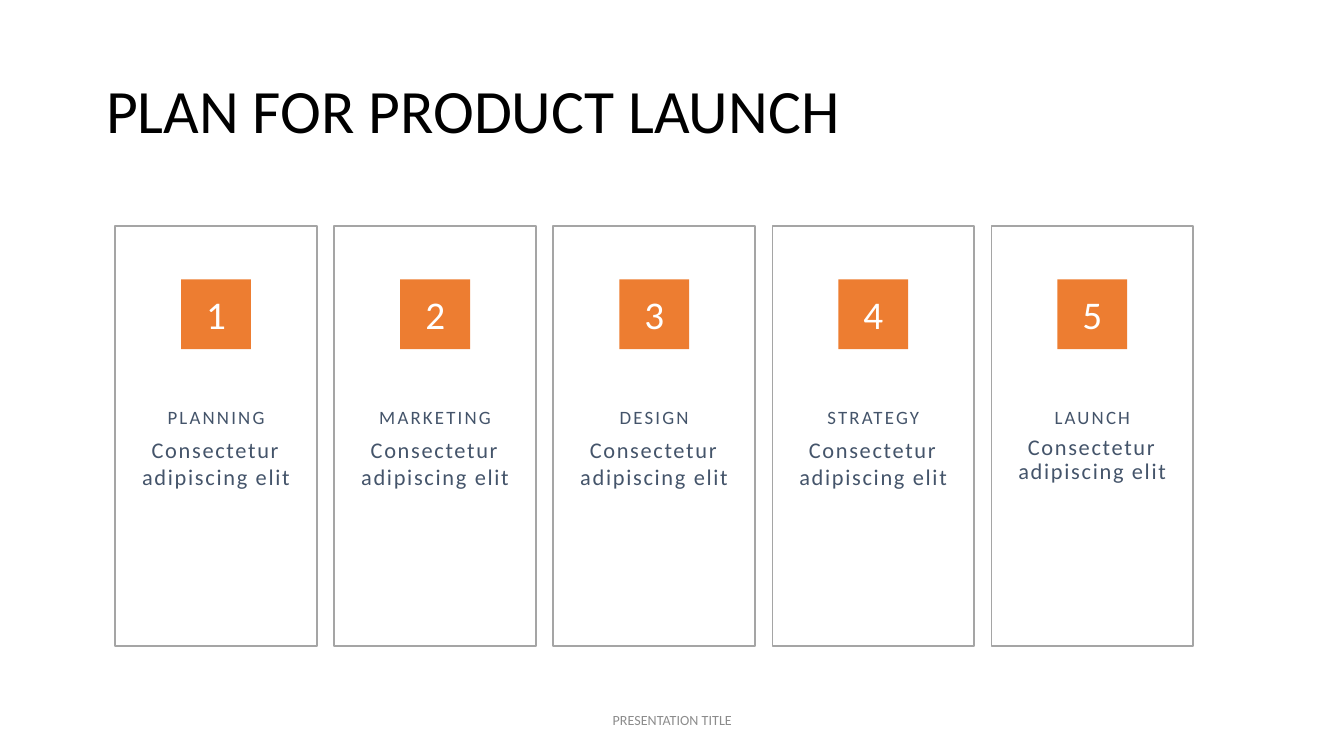
from dataclasses import dataclass

from pptx import Presentation
from pptx.dml.color import RGBColor as Rgb
from pptx.enum.shapes import MSO_SHAPE as Preset
from pptx.enum.text import MSO_ANCHOR as Anchor, MSO_AUTO_SIZE as AutoSize, PP_ALIGN as Align
from pptx.shapes.autoshape import Shape
from pptx.shapes.shapetree import SlideShapes
from pptx.text.text import TextFrame
from pptx.util import Cm, Pt


@dataclass(frozen=True)
class Theme:
    font: str = "Calibri"
    black: str = "000000"
    white: str = "FFFFFF"
    border: str = "A5A5A5"
    accent: str = "ED7D31"
    ink: str = "44546A"
    muted: str = "8C8C8C"
    title_size: float = 33
    number_size: float = 21
    heading_size: float = 10.1
    detail_size: float = 12
    footer_size: float = 7.5


@dataclass(frozen=True)
class Step:
    number: int
    heading: str
    detail: str = "Consectetur adipiscing elit"
    detail_spacing: float = 1.0


THEME = Theme()
STEPS = [
    Step(1, "PLANNING"),
    Step(2, "MARKETING"),
    Step(3, "DESIGN"),
    Step(4, "STRATEGY"),
    Step(5, "LAUNCH", detail_spacing=0.9),
]

# Card grid, in centimetres
CARD_LEFT, CARD_TOP = 2.18, 4.27
CARD_WIDTH, CARD_HEIGHT = 3.81, 7.95
CARD_PITCH = 4.14
BADGE_SIZE, BADGE_TOP = 1.32, 5.28


def write(frame: TextFrame, text: str, *, size: float, color: str,
          align: Align = Align.CENTER, line: float = 1.0, after: float = 0,
          tracking: float = 0, new_paragraph: bool = False) -> None:
    """Write one formatted paragraph; tracking is letter spacing in points."""
    para = frame.add_paragraph() if new_paragraph else frame.paragraphs[0]
    para.alignment = align
    para.line_spacing = line
    para.space_before, para.space_after = Pt(0), Pt(after)
    span = para.add_run()
    span.text = text
    span.font.name = THEME.font
    span.font.size = Pt(size)
    span.font.color.rgb = Rgb.from_string(color)
    if tracking:
        span.font._element.set("spc", str(round(tracking * 100)))


def add_box(shapes: SlideShapes, left: float, top: float, width: float,
            height: float, fill: str, border: str | None = None) -> Shape:
    box = shapes.add_shape(Preset.RECTANGLE, Cm(left), Cm(top), Cm(width), Cm(height))
    box.shadow.inherit = False
    box.fill.solid()
    box.fill.fore_color.rgb = Rgb.from_string(fill)
    if border:
        box.line.color.rgb = Rgb.from_string(border)
        box.line.width = Pt(1)
    else:
        box.line.fill.background()
    box.text_frame.word_wrap = True
    return box


def add_card(shapes: SlideShapes, step: Step, left: float) -> None:
    group = shapes.add_group_shape()

    # Outlined card with heading and detail
    card = add_box(group.shapes, left, CARD_TOP, CARD_WIDTH, CARD_HEIGHT,
                   THEME.white, THEME.border)
    frame = card.text_frame
    frame.vertical_anchor = Anchor.TOP
    frame.margin_left = frame.margin_right = Cm(0.28)
    frame.margin_top, frame.margin_bottom = Cm(3.45), Cm(1.88)
    write(frame, step.heading, size=THEME.heading_size, color=THEME.ink,
          line=0.9, after=4, tracking=1.2)
    write(frame, step.detail, size=THEME.detail_size, color=THEME.ink,
          line=step.detail_spacing, tracking=0.9, new_paragraph=True)

    # Number badge, centred across the card
    badge = add_box(group.shapes, left + (CARD_WIDTH - BADGE_SIZE) / 2, BADGE_TOP,
                    BADGE_SIZE, BADGE_SIZE, THEME.accent)
    badge.text_frame.vertical_anchor = Anchor.MIDDLE
    write(badge.text_frame, str(step.number), size=THEME.number_size, color=THEME.white)


def main() -> None:
    deck = Presentation()
    deck.slide_width, deck.slide_height = Cm(25.4), Cm(14.29)
    page = deck.slides.add_slide(deck.slide_layouts.get_by_name("Title Only"))

    # Title
    title = page.shapes.title
    title.left, title.top, title.width, title.height = Cm(1.75), Cm(0.76), Cm(21.89), Cm(2.77)
    title.text_frame.auto_size = AutoSize.NONE
    title.text_frame.vertical_anchor = Anchor.MIDDLE
    write(title.text_frame, "PLAN FOR PRODUCT LAUNCH", size=THEME.title_size,
          color=THEME.black, align=Align.LEFT, line=0.9)

    # Footer
    footer = page.shapes.add_textbox(Cm(8.41), Cm(13.23), Cm(8.59), Cm(0.76))
    footer.text_frame.word_wrap = True
    footer.text_frame.vertical_anchor = Anchor.MIDDLE
    write(footer.text_frame, "PRESENTATION TITLE", size=THEME.footer_size, color=THEME.muted)

    # Launch steps
    for index, step in enumerate(STEPS):
        add_card(page.shapes, step, CARD_LEFT + index * CARD_PITCH)

    deck.save("out.pptx")


if __name__ == "__main__":
    main()
